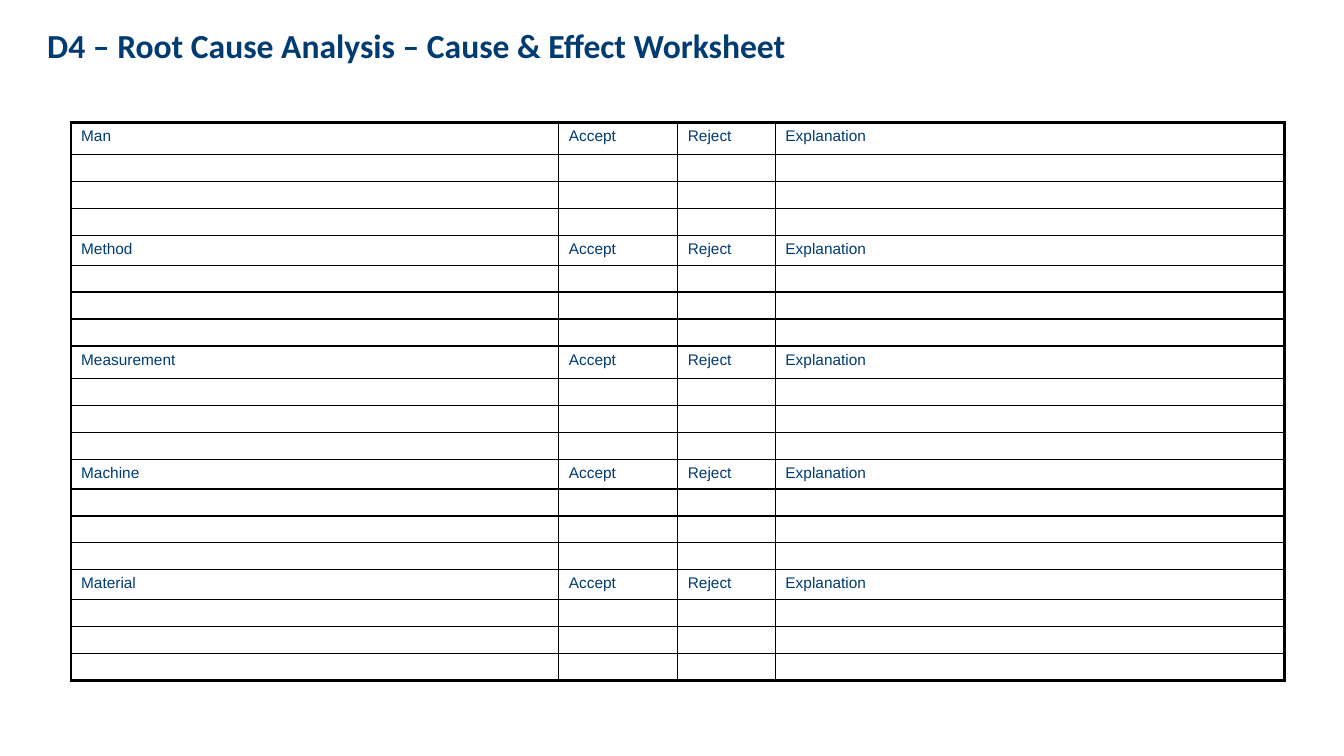
from lxml import etree
from pptx import Presentation
from pptx.dml.color import RGBColor
from pptx.enum.text import MSO_ANCHOR
from pptx.oxml.ns import qn
from pptx.util import Cm, Pt

TOP = MSO_ANCHOR.TOP
NAVY = RGBColor(0x00, 0x3B, 0x71)
BLACK = RGBColor(0x00, 0x00, 0x00)

# Content: each cause with the height of its heading row in cm
TITLE = "D4 – Root Cause Analysis – Cause & Effect Worksheet"
CAUSES = [
    ("Man", 0.82),
    ("Method", 0.74),
    ("Measurement", 0.82),
    ("Machine", 0.74),
    ("Material", 0.74),
]
HEADS = ["Accept", "Reject", "Explanation"]
BLANKS = 3

# Layout in cm, line widths in points
WIDTHS = [12.29, 3.0, 2.46, 12.83]
BLANK_H = 0.68
LEFT, UPPER = 1.79, 3.08
THIN, THICK = 1, 2.25


def add_run(para, text, font, size, bold=False):
    run = para.add_run()
    run.text = text
    run.font.name = font
    run.font.size = Pt(size)
    run.font.bold = bold
    run.font.color.rgb = NAVY


def add_edge(cell, side, width):
    props = cell._tc.get_or_add_tcPr()
    line = etree.SubElement(props, qn("a:ln" + side), w=str(Pt(width)))
    fill = etree.SubElement(line, qn("a:solidFill"))
    etree.SubElement(fill, qn("a:srgbClr"), val=str(BLACK))


# Rows: a heading row and blank rows for every cause
rows, heights = [], []
for cause, height in CAUSES:
    rows += [[cause] + HEADS] + [[""] * len(WIDTHS)] * BLANKS
    heights += [height] + [BLANK_H] * BLANKS

deck = Presentation()
deck.slide_width, deck.slide_height = Cm(33.87), Cm(19.05)
slide = deck.slides.add_slide(deck.slide_layouts[6])

# Worksheet table
grid = slide.shapes.add_table(
    len(rows), len(WIDTHS), Cm(LEFT), Cm(UPPER), Cm(sum(WIDTHS)), Cm(sum(heights))
).table
grid.first_row = grid.horz_banding = False
for col, width in zip(grid.columns, WIDTHS):
    col.width = Cm(width)
for row, height in zip(grid.rows, heights):
    row.height = Cm(height)

last_row, last_col = len(rows) - 1, len(WIDTHS) - 1
for r, words in enumerate(rows):
    for c, word in enumerate(words):
        cell = grid.cell(r, c)
        cell.vertical_anchor = TOP
        outer = {"L": c == 0, "R": c == last_col, "T": r == 0, "B": r == last_row}
        for side, thick in outer.items():
            add_edge(cell, side, THICK if thick else THIN)
        cell.fill.background()
        para = cell.text_frame.paragraphs[0]
        if word:
            add_run(para, word, "Arial", 11)
        else:
            # Small type keeps the blank rows at their height
            etree.SubElement(para._p, qn("a:endParaRPr"), sz="800")

# Title
box = slide.shapes.add_textbox(Cm(0.94), Cm(0.51), Cm(28.55), Cm(1.98))
box.text_frame.word_wrap = True
add_run(box.text_frame.paragraphs[0], TITLE, "Calibri", 24, bold=True)

deck.save("out.pptx")
